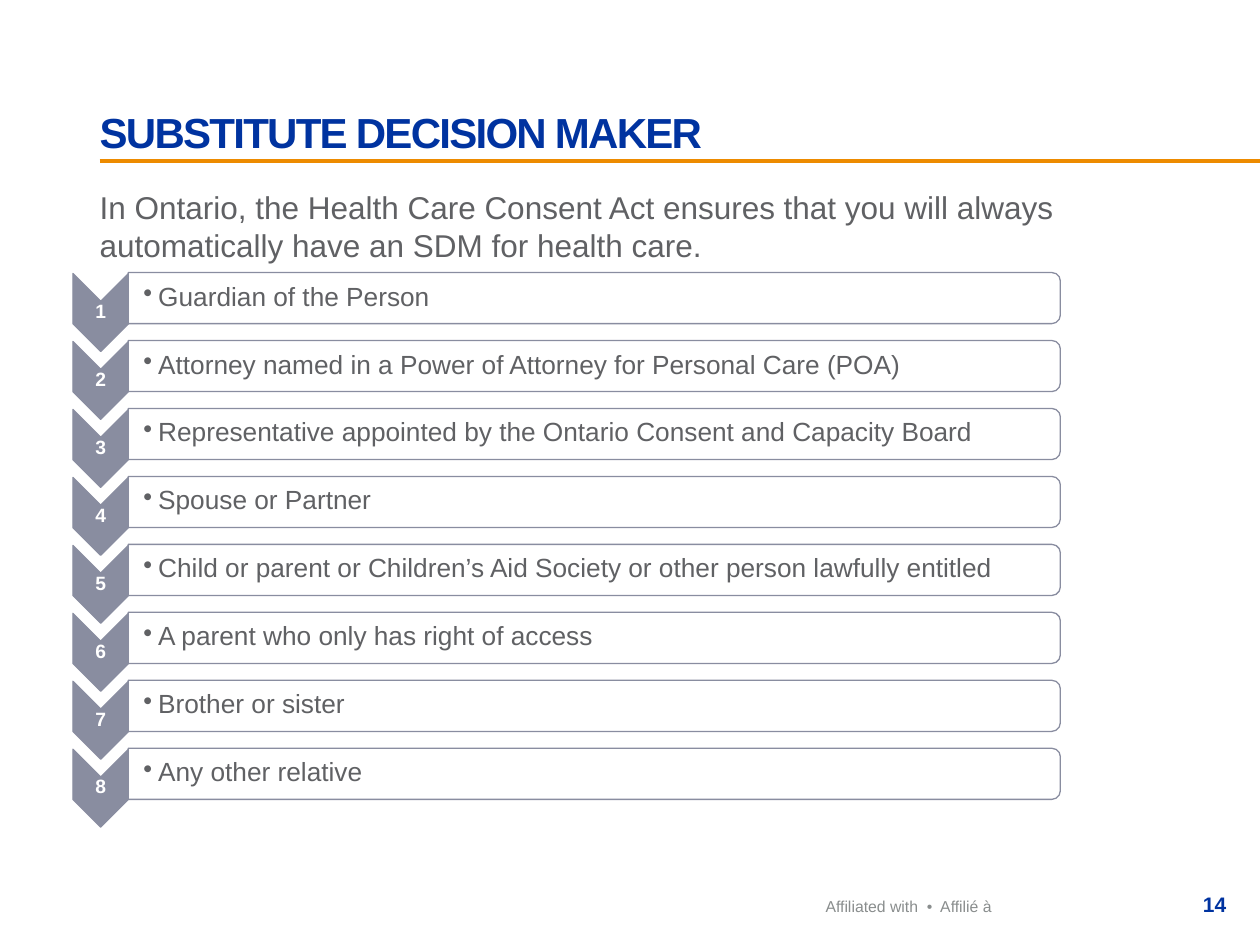
from dataclasses import dataclass

from lxml import etree
from pptx import Presentation
from pptx.dml.color import RGBColor
from pptx.enum.shapes import MSO_CONNECTOR, MSO_SHAPE
from pptx.enum.text import MSO_ANCHOR, MSO_AUTO_SIZE, PP_ALIGN
from pptx.oxml.ns import qn
from pptx.util import Cm, Pt

LEFT, CENTER, RIGHT = PP_ALIGN.LEFT, PP_ALIGN.CENTER, PP_ALIGN.RIGHT
TOP, MIDDLE, BOTTOM = MSO_ANCHOR.TOP, MSO_ANCHOR.MIDDLE, MSO_ANCHOR.BOTTOM
CHEVRON, BAR = MSO_SHAPE.CHEVRON, MSO_SHAPE.ROUND_2_SAME_RECTANGLE
STRAIGHT, NO_AUTOFIT = MSO_CONNECTOR.STRAIGHT, MSO_AUTO_SIZE.NONE

TITLE_ONLY = 5
SLIDE_WIDTH, SLIDE_HEIGHT = 25.4, 19.05
MARGIN = 2.01
ROW_PITCH = 1.37
DECISION_MAKERS = (
    "Guardian of the Person",
    "Attorney named in a Power of Attorney for Personal Care (POA)",
    "Representative appointed by the Ontario Consent and Capacity Board",
    "Spouse or Partner",
    "Child or parent or Children’s Aid Society or other person lawfully entitled",
    "A parent who only has right of access",
    "Brother or sister",
    "Any other relative",
)


@dataclass(frozen=True)
class Theme:
    font: str = "Arial"
    blue: str = "0033A0"
    orange: str = "ED8B00"
    body: str = "606164"
    footer: str = "898D8D"
    step: str = "898DA0"
    white: str = "FFFFFF"
    title_size: int = 24
    intro_size: int = 18
    item_size: int = 15
    page_size: int = 12
    number_size: int = 11
    footer_size: int = 9


class SlideBuilder:
    """Draws styled elements on the current slide."""

    def __init__(self, slide, theme):
        self.slide = slide
        self.theme = theme

    def format_text(self, shape, text, size, color, bold=False, align=LEFT,
                    anchor=TOP, insets=(0, 0, 0, 0), spacing=None, bullet_indent=None):
        frame = shape.text_frame
        frame.text = text
        frame.word_wrap = True
        frame.auto_size = NO_AUTOFIT
        frame.vertical_anchor = anchor
        frame.margin_left, frame.margin_top, frame.margin_right, frame.margin_bottom = map(Cm, insets)
        paragraph = frame.paragraphs[0]
        paragraph.alignment = align
        if spacing:
            paragraph.line_spacing = spacing
        if bullet_indent:
            properties = paragraph._p.get_or_add_pPr()
            properties.set("marL", str(Cm(bullet_indent)))
            properties.set("indent", str(-Cm(bullet_indent)))
            etree.SubElement(properties, qn("a:buChar")).set("char", "•")
        font = paragraph.font
        font.name, font.size, font.bold = self.theme.font, Pt(size), bold
        font.color.rgb = RGBColor.from_string(color)
        return paragraph

    def title(self, text, left, top, width, height):
        shape = self.slide.shapes.title
        shape.left, shape.top, shape.width, shape.height = map(Cm, (left, top, width, height))
        paragraph = self.format_text(shape, text, self.theme.title_size, self.theme.blue, bold=True,
                                     anchor=BOTTOM, insets=(0, 0, 0, 0.1), spacing=0.8)
        paragraph.runs[0]._r.get_or_add_rPr().set("spc", "-100")

    def text_box(self, text, left, top, width, height, size, color, parent=None, **style):
        shapes = (parent or self.slide).shapes
        shape = shapes.add_textbox(Cm(left), Cm(top), Cm(width), Cm(height))
        self.format_text(shape, text, size, color, **style)

    def rule(self, left, right, y):
        line = self.slide.shapes.add_connector(STRAIGHT, Cm(left), Cm(y), Cm(right), Cm(y))
        line.line.color.rgb = RGBColor.from_string(self.theme.orange)
        line.line.width = Pt(2)
        etree.SubElement(line._element.spPr, qn("a:effectLst"))

    def turned_shape(self, group, kind, center_x, center_y, width, height, fill):
        shape = group.shapes.add_shape(kind, Cm(center_x - width / 2), Cm(center_y - height / 2),
                                       Cm(width), Cm(height))
        shape.rotation = 90
        shape.shadow.inherit = False
        shape.fill.solid()
        shape.fill.fore_color.rgb = RGBColor.from_string(fill)
        shape.line.color.rgb = RGBColor.from_string(self.theme.step)
        shape.line.width = Pt(0.75)
        return shape

    def step(self, group, number, text, offset):
        theme = self.theme
        self.turned_shape(group, CHEVRON, 2.03, 6.3 + offset, 1.57, 1.12, theme.step)
        self.text_box(str(number), 1.47, 6.05 + offset, 1.12, 0.48, theme.number_size, theme.white, group,
                      bold=True, align=CENTER, anchor=MIDDLE, insets=(0.03,) * 4, spacing=0.9)
        bar = self.turned_shape(group, BAR, 11.98, 6.01 + offset, 1.03, 18.79, theme.white)
        color = bar._element.spPr.find(qn("a:solidFill"))[0]
        etree.SubElement(color, qn("a:alpha")).set("val", "90000")
        self.text_box(text, 2.59, 5.53 + offset, 18.75, 0.94, theme.item_size, theme.body, group,
                      anchor=MIDDLE, insets=(0.3, 0.03, 0.03, 0.03), spacing=0.9, bullet_indent=0.3)

    def steps(self, items):
        group = self.slide.shapes.add_group_shape()
        for index, item in enumerate(items):
            self.step(group, index + 1, item, index * ROW_PITCH)


def main():
    presentation = Presentation()
    presentation.slide_width, presentation.slide_height = Cm(SLIDE_WIDTH), Cm(SLIDE_HEIGHT)
    theme = Theme()
    slide = presentation.slides.add_slide(presentation.slide_layouts[TITLE_ONLY])
    builder = SlideBuilder(slide, theme)
    builder.text_box("Affiliated with  •  Affilié à", 14.27, 18.08, 5.72, 0.56,
                     theme.footer_size, theme.footer, align=RIGHT)
    builder.rule(MARGIN, SLIDE_WIDTH, 3.25)
    builder.text_box("In Ontario, the Health Care Consent Act ensures that you will always "
                     "automatically have an SDM for health care.", MARGIN, 3.66, 21.59, 12.62,
                     theme.intro_size, theme.body, insets=(0, 0.13, 0, 0))
    builder.title("SUBSTITUTE DECISION MAKER", MARGIN, 1.24, 21.59, 2.01)
    builder.text_box("14", 23.01, 17.55, 1.96, 1.35, theme.page_size, theme.blue, bold=True,
                     align=RIGHT, anchor=MIDDLE, insets=(0.25, 0.13, 0.25, 0.13))
    builder.steps(DECISION_MAKERS)
    presentation.save("out.pptx")


if __name__ == "__main__":
    main()
